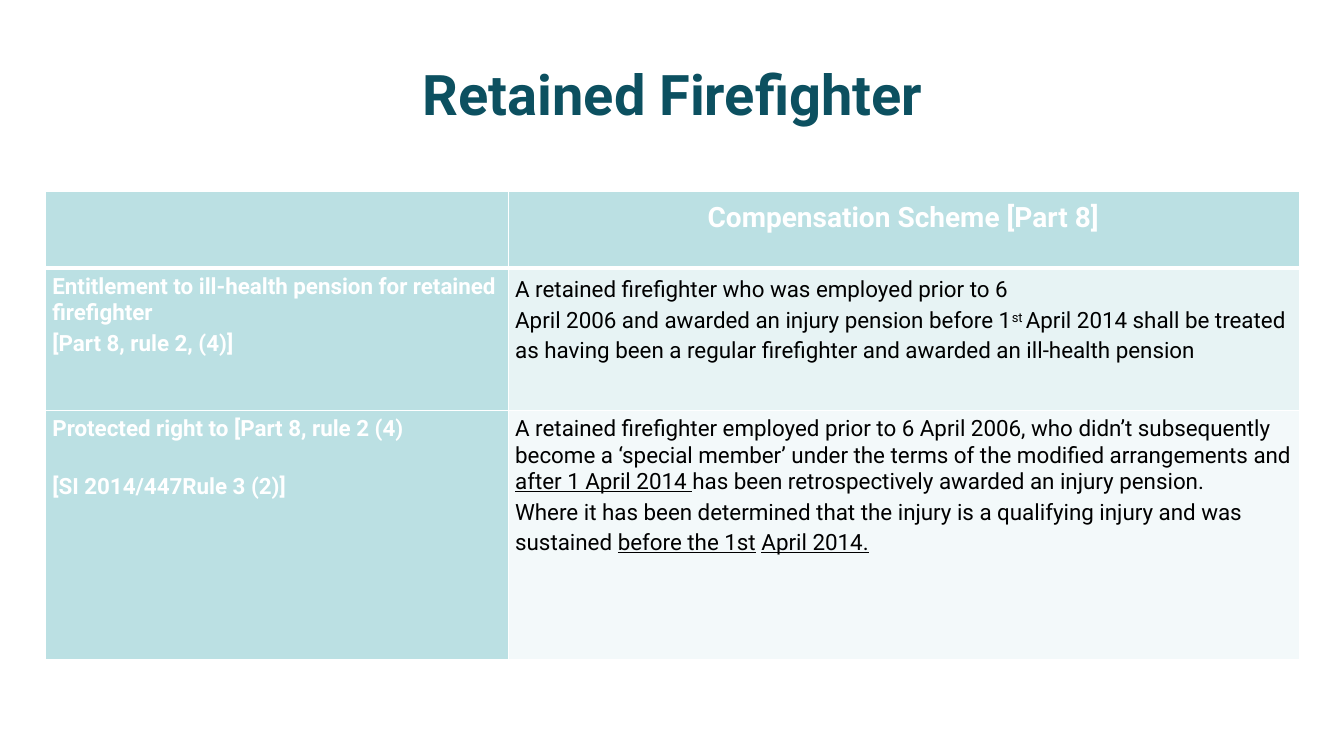
from lxml import etree
from pptx import Presentation
from pptx import util as u
from pptx.dml.color import RGBColor
from pptx.enum import text
from pptx.oxml import ns

PX = 9144  # 100 px to the inch
TEAL, WHITE, BLACK = "BBE0E3", "FFFFFF", "000000"
COLUMNS = [459, 785]
ROWS = [76, 141, 247]
UNDERLINE, SUPERSCRIPT = "underline", "superscript"


def px(length):
    return u.Emu(length * PX)


def colour(value):
    return RGBColor.from_string(value)


class SlideBuilder:
    def __init__(self, deck, font):
        self.page = deck.slides.add_slide(deck.slide_layouts[6])
        self.font = font

    def style(self, para, size, ink, bold, centred=False):
        para.alignment = text.PP_ALIGN.CENTER if centred else text.PP_ALIGN.LEFT
        para.font.name = self.font
        para.font.size = u.Pt(size)
        para.font.bold = bold
        para.font.color.rgb = colour(ink)

    def title(self, words, left, top, width, height):
        box = self.page.shapes.add_textbox(px(left), px(top), px(width), px(height))
        frame = box.text_frame
        frame.word_wrap = True
        frame.vertical_anchor = text.MSO_ANCHOR.MIDDLE
        frame.text = words
        self.style(frame.paragraphs[0], 40, "0C5060", True, centred=True)

    def table(self, left, top, columns, rows):
        frame = self.page.shapes.add_table(
            len(rows), len(columns), px(left), px(top), px(sum(columns)), px(sum(rows)))
        for column, width in zip(frame.table.columns, columns):
            column.width = px(width)
        for row, height in zip(frame.table.rows, rows):
            row.height = px(height)
        return frame.table

    def borders(self, cell, bottom):
        """Draw white cell edges, 1 pt wide except for the bottom one."""
        properties = cell._tc.get_or_add_tcPr()
        for edge, points in (("lnL", 1), ("lnR", 1), ("lnT", 1), ("lnB", bottom)):
            line = etree.SubElement(properties, ns.qn(f"a:{edge}"), w=str(u.Pt(points)))
            fill = etree.SubElement(line, ns.qn("a:solidFill"))
            etree.SubElement(fill, ns.qn("a:srgbClr"), val=WHITE)

    def cell(self, cell, paragraphs, fill, bottom=1, size=16, ink=WHITE,
             bold=True, centred=False):
        """Fill a cell; each paragraph is (line spacing, space after, runs)."""
        self.borders(cell, bottom)
        cell.fill.solid()
        cell.fill.fore_color.rgb = colour(fill)
        cell.margin_left, cell.margin_right = px(7), px(8)
        cell.margin_top, cell.margin_bottom = px(5), px(0)
        for index, (spacing, after, runs) in enumerate(paragraphs):
            frame = cell.text_frame
            para = frame.add_paragraph() if index else frame.paragraphs[0]
            para.line_spacing = spacing
            para.space_after = u.Pt(after)
            self.style(para, size, ink, bold, centred)
            for words, effect in runs:
                span = para.add_run()
                span.text = words
                if effect == UNDERLINE:
                    span.font.underline = True
                elif effect == SUPERSCRIPT:
                    span._r.get_or_add_rPr().set("baseline", "30000")


def plain(words):
    return [(words, None)]


HEADING = [(1.15, 0, plain("Compensation Scheme [Part 8]"))]

# Row label, row body, body fill
PROVISIONS = [
    ([(1.01, 0.8, plain("Entitlement to ill-health pension for retained firefighter")),
      (1.15, 0, plain("[Part 8, rule 2, (4)]"))],
     [(1.15, 0.8, plain("A retained firefighter who was employed prior to 6")),
      (1.15, 0, [
          ("April 2006 and awarded an injury pension before 1", None),
          ("st ", SUPERSCRIPT),
          ("April 2014 shall be treated as having been a regular firefighter "
           "and awarded an ill-health pension", None)])],
     "E7F3F4"),
    ([(1.02, 20, plain("Protected right to [Part 8, rule 2 (4)")),
      (1.15, 0, plain("[SI 2014/447Rule 3 (2)]"))],
     [(1.02, 0.8, [
         ("A retained firefighter employed prior to 6 April 2006, who didn’t "
          "subsequently become a ‘special member’ under the terms of the "
          "modified arrangements and ", None),
         ("after 1 April 2014 ", UNDERLINE),
         ("has been retrospectively awarded an injury pension.", None)]),
      (1.15, 0, [
          ("Where it has been determined that the injury is a qualifying injury "
           "and was sustained ", None),
          ("before the 1st", UNDERLINE),
          (" ", None),
          ("April 2014.", UNDERLINE)])],
     "F3F9FA"),
]


def main():
    deck = Presentation()
    deck.slide_width, deck.slide_height = px(1333), px(750)
    slide = SlideBuilder(deck, "Roboto")
    slide.title("Retained Firefighter", 67, 30, 1200, 125)

    table = slide.table(45, 190, COLUMNS, ROWS)
    slide.cell(table.cell(0, 0), [], TEAL, bottom=3)
    slide.cell(table.cell(0, 1), HEADING, TEAL, bottom=3, size=20, centred=True)
    for row, (label, body, fill) in enumerate(PROVISIONS, start=1):
        slide.cell(table.cell(row, 0), label, TEAL)
        slide.cell(table.cell(row, 1), body, fill, ink=BLACK, bold=False)
    deck.save("out.pptx")


if __name__ == "__main__":
    main()
